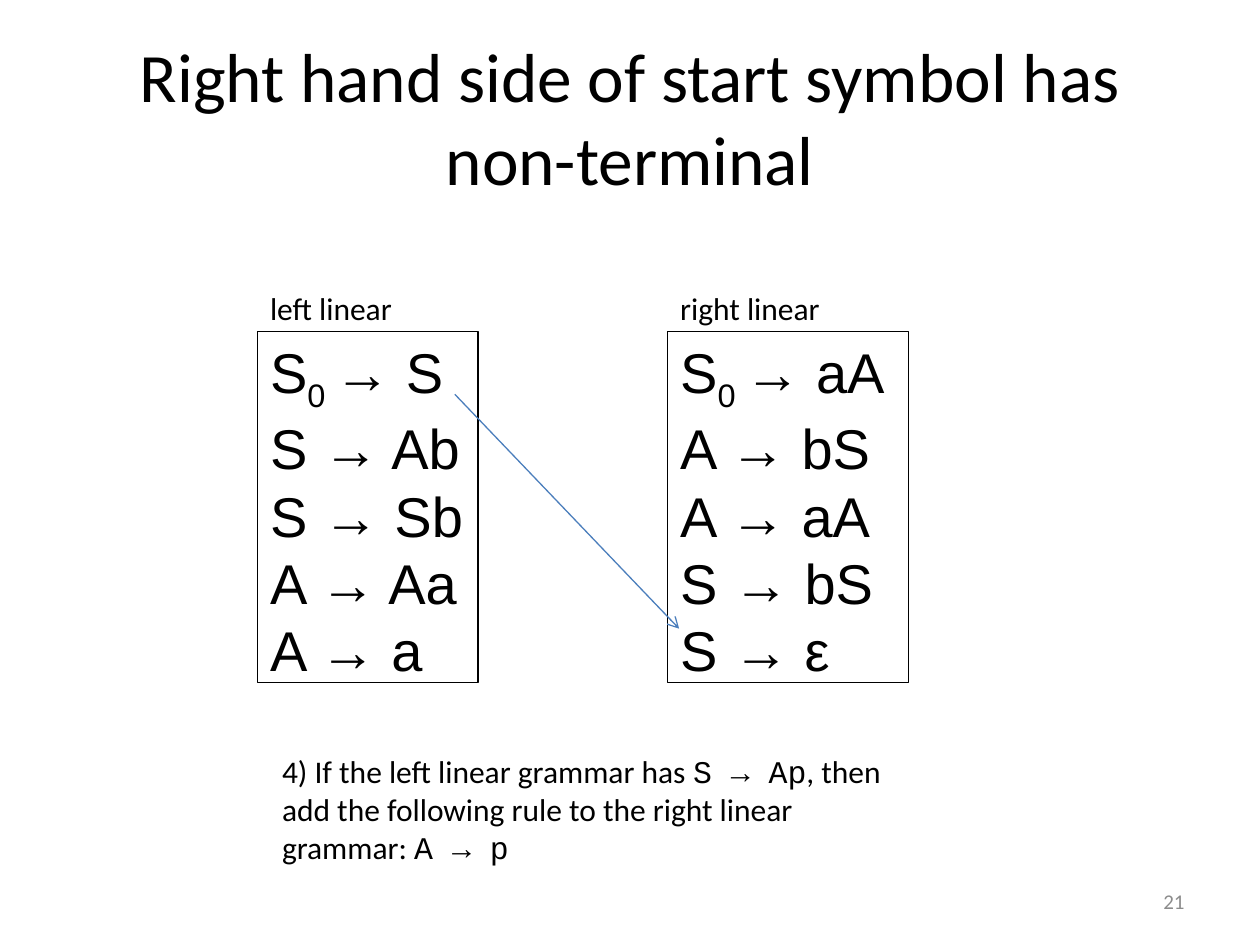
import pptx
import pptx.util
import pptx.dml.color
import pptx.enum.shapes
import pptx.enum.text
import pptx.oxml.ns
import lxml.etree

COLORS = {"text": "000000", "number": "8C8C8C", "arrow": "4B7EBC"}
ALIGN = pptx.enum.text.PP_ALIGN
ANCHOR = pptx.enum.text.MSO_ANCHOR
AUTO = pptx.enum.text.MSO_AUTO_SIZE

prs = pptx.Presentation()
prs.slide_width = pptx.util.Inches(10)
prs.slide_height = pptx.util.Inches(7.5)
s = prs.slides.add_slide(prs.slide_layouts[6])


def place(*shares):
    sides = (prs.slide_width, prs.slide_height) * 2
    return [round(side * share / 100) for side, share in zip(sides, shares)]


def add_text(paragraphs, at, size=18, font="Calibri", color="text", align=ALIGN.LEFT,
             anchor=ANCHOR.TOP, wrap=True, grow=True, boxed=False):
    if boxed:
        sp = s.shapes.add_shape(pptx.enum.shapes.MSO_SHAPE.RECTANGLE, *place(*at))
        sp.shadow.inherit = False
        sp.fill.background()
        sp.line.color.rgb = pptx.dml.color.RGBColor.from_string(COLORS["text"])
        sp.line.width = pptx.util.Pt(0.75)
    else:
        sp = s.shapes.add_textbox(*place(*at))
    tf = sp.text_frame
    tf.word_wrap = wrap
    tf.auto_size = AUTO.SHAPE_TO_FIT_TEXT if grow else AUTO.NONE
    tf.vertical_anchor = anchor
    for i, runs in enumerate(paragraphs):
        p = tf.add_paragraph() if i else tf.paragraphs[0]
        p.alignment = align
        for text, change in runs:
            r = p.add_run()
            r.text = text
            r.font.size = pptx.util.Pt(size)
            r.font.name = change.get("font", font)
            r.font.color.rgb = pptx.dml.color.RGBColor.from_string(COLORS[color])
            if "baseline" in change:
                r.font._element.set("baseline", change["baseline"])


add_text([[("Right hand side of start symbol has non-terminal", {})]], (5, 4, 90, 16.67),
         size=39.6, align=ALIGN.CENTER, anchor=ANCHOR.MIDDLE, grow=False)

grammars = [
    ("left linear", 20.45, 17.5, 11.9, ["→ S", "S → Ab", "S → Sb", "A → Aa", "A → a"]),
    ("right linear", 53, 19.1, 13.2, ["→ aA", "A → bS", "A → aA", "S → bS", "S → ε"]),
]
for label, left, width, label_width, (start, *rules) in grammars:
    first = [("S", {}), ("0 ", {"baseline": "-25000"}), (start, {})]
    add_text([first] + [[(rule, {})] for rule in rules], (left, 35.05, width, 37.2),
             size=32, font="Arial", wrap=False, boxed=True)
    add_text([[(label, {})]], (left, 29.9, label_width, 5.33), wrap=False)

code = {"font": "Courier New"}
add_text([[("4) If the left linear grammar has ", {}), ("S → Ap", code),
           (", then add the following rule to the right linear grammar: ", {}),
           ("A → p", code)]], (21.4, 78.93, 50, 13.47))

add_text([[("21", {})]], (71.7, 92.67, 23.3, 5.33), size=12, color="number",
         align=ALIGN.RIGHT, anchor=ANCHOR.MIDDLE, grow=False)

arrow = s.shapes.add_connector(pptx.enum.shapes.MSO_CONNECTOR.STRAIGHT,
                               *place(36.1, 41.73, 53.9, 66.53))
arrow.line.color.rgb = pptx.dml.color.RGBColor.from_string(COLORS["arrow"])
arrow.line.width = pptx.util.Pt(0.75)
qn = pptx.oxml.ns.qn
lxml.etree.SubElement(arrow.line._get_or_add_ln(), qn("a:tailEnd"), type="arrow")
lxml.etree.SubElement(arrow._element.spPr, qn("a:effectLst"))

prs.save("out.pptx")
